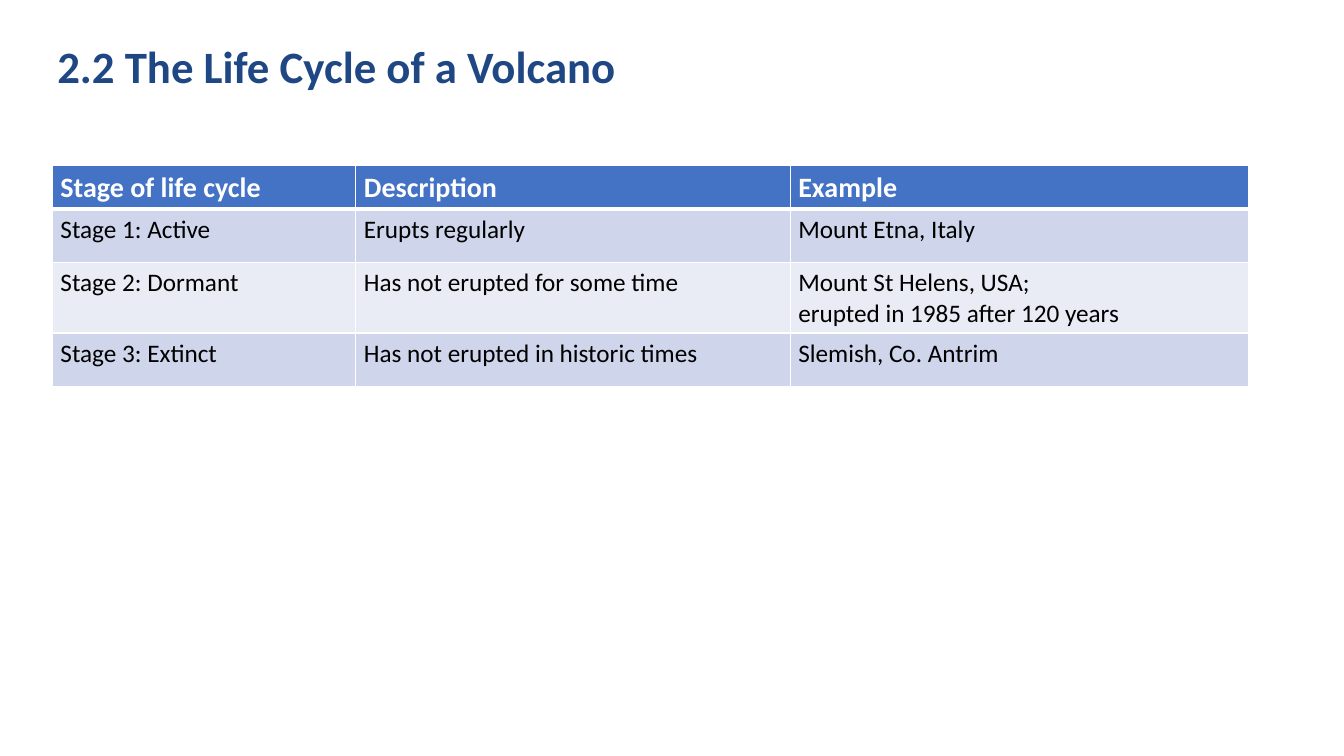
"""Build the slide on the life cycle of a volcano."""
from dataclasses import dataclass

from lxml import etree
from pptx import Presentation
from pptx import util as u
from pptx.dml import color
from pptx.enum import text
from pptx.oxml import ns

COLS, ROWS = 160, 90
WIDTH, HEIGHT = u.Inches(13.333), u.Inches(7.5)


@dataclass(frozen=True)
class Theme:
    font: str = "Calibri"
    title: str = "1E4783"
    head: str = "4472C4"
    bands: tuple[str, str] = ("CFD5EA", "E9EBF5")
    light: str = "FFFFFF"
    dark: str = "000000"
    title_size: int = 32
    head_size: int = 20
    body_size: int = 18


@dataclass(frozen=True)
class Style:
    size: int
    ink: str
    bold: bool = False
    fill: str = ""
    rule: int = 1
    hanging: float = 0


@dataclass(frozen=True)
class Stage:
    name: str
    description: str
    example: str

    def texts(self) -> tuple[str, str, str]:
        return self.name, self.description, self.example


THEME = Theme()
TITLE = Style(THEME.title_size, THEME.title, bold=True)
HEAD = Style(THEME.head_size, THEME.light, True, THEME.head, rule=3, hanging=4.68)
COL_WIDTHS = (36.12, 51.72, 54.6)
HEAD_ROW, BODY_ROW = 5.16, 6.36
STAGES = (
    Stage("Stage of life cycle", "Description", "Example"),
    Stage("Stage 1: Active", "Erupts regularly", "Mount Etna, Italy"),
    Stage("Stage 2: Dormant", "Has not erupted for some time",
          "Mount St Helens, USA;\nerupted in 1985 after 120 years"),
    Stage("Stage 3: Extinct", "Has not erupted in historic times",
          "Slemish, Co. Antrim"),
)


def across(cols: float) -> int:
    return round(WIDTH * cols / COLS)


def down(rows: float) -> int:
    return round(HEIGHT * rows / ROWS)


def write(p, words: str, style: Style) -> None:
    for i, line in enumerate(words.split("\n")):
        if i:
            p.add_line_break()
        r = p.add_run()
        r.text = line
        r.font.name = THEME.font
        r.font.size = u.Pt(style.size)
        r.font.bold = style.bold
        r.font.color.rgb = color.RGBColor.from_string(style.ink)


def add_border(cell, side: str, points: int) -> None:
    tc_pr = cell._tc.get_or_add_tcPr()
    ln = etree.SubElement(tc_pr, ns.qn(f"a:ln{side}"), w=str(u.Pt(points)))
    fill = etree.SubElement(ln, ns.qn("a:solidFill"))
    etree.SubElement(fill, ns.qn("a:srgbClr"), val=THEME.light)


def fill_cell(cell, words: str, style: Style) -> None:
    for side in "LRTB":
        add_border(cell, side, style.rule if side == "B" else 1)
    cell.fill.solid()
    cell.fill.fore_color.rgb = color.RGBColor.from_string(style.fill)
    cell.margin_left = cell.margin_right = u.Inches(0.08)
    cell.margin_top = cell.margin_bottom = u.Inches(0.05)
    p = cell.text_frame.paragraphs[0]
    if style.hanging:
        p_pr = p._p.get_or_add_pPr()
        p_pr.set("marL", str(across(style.hanging)))
        p_pr.set("indent", str(-across(style.hanging)))
    write(p, words, style)


def add_title(s, words: str) -> None:
    sp = s.shapes.add_textbox(across(5.64), down(4.68), across(138), down(8.16))
    tf = sp.text_frame
    tf.word_wrap = True
    tf.vertical_anchor = text.MSO_ANCHOR.TOP
    p = tf.paragraphs[0]
    p.line_spacing = 0.9
    write(p, words, TITLE)


def add_stages(s, stages: tuple[Stage, ...]) -> None:
    height = HEAD_ROW + BODY_ROW * (len(stages) - 1)
    table = s.shapes.add_table(
        len(stages), len(COL_WIDTHS), across(6.24), down(19.68),
        across(sum(COL_WIDTHS)), down(height)).table
    for column, width in zip(table.columns, COL_WIDTHS):
        column.width = across(width)
    for i, (row, stage) in enumerate(zip(table.rows, stages)):
        row.height = down(BODY_ROW if i else HEAD_ROW)
        band = THEME.bands[(i - 1) % 2]
        style = Style(THEME.body_size, THEME.dark, fill=band) if i else HEAD
        for cell, words in zip(row.cells, stage.texts()):
            fill_cell(cell, words, style)


def main() -> None:
    prs = Presentation()
    prs.slide_width, prs.slide_height = WIDTH, HEIGHT
    s = prs.slides.add_slide(prs.slide_layouts[6])
    add_title(s, "2.2 The Life Cycle of a Volcano")
    add_stages(s, STAGES)
    prs.save("out.pptx")


if __name__ == "__main__":
    main()
